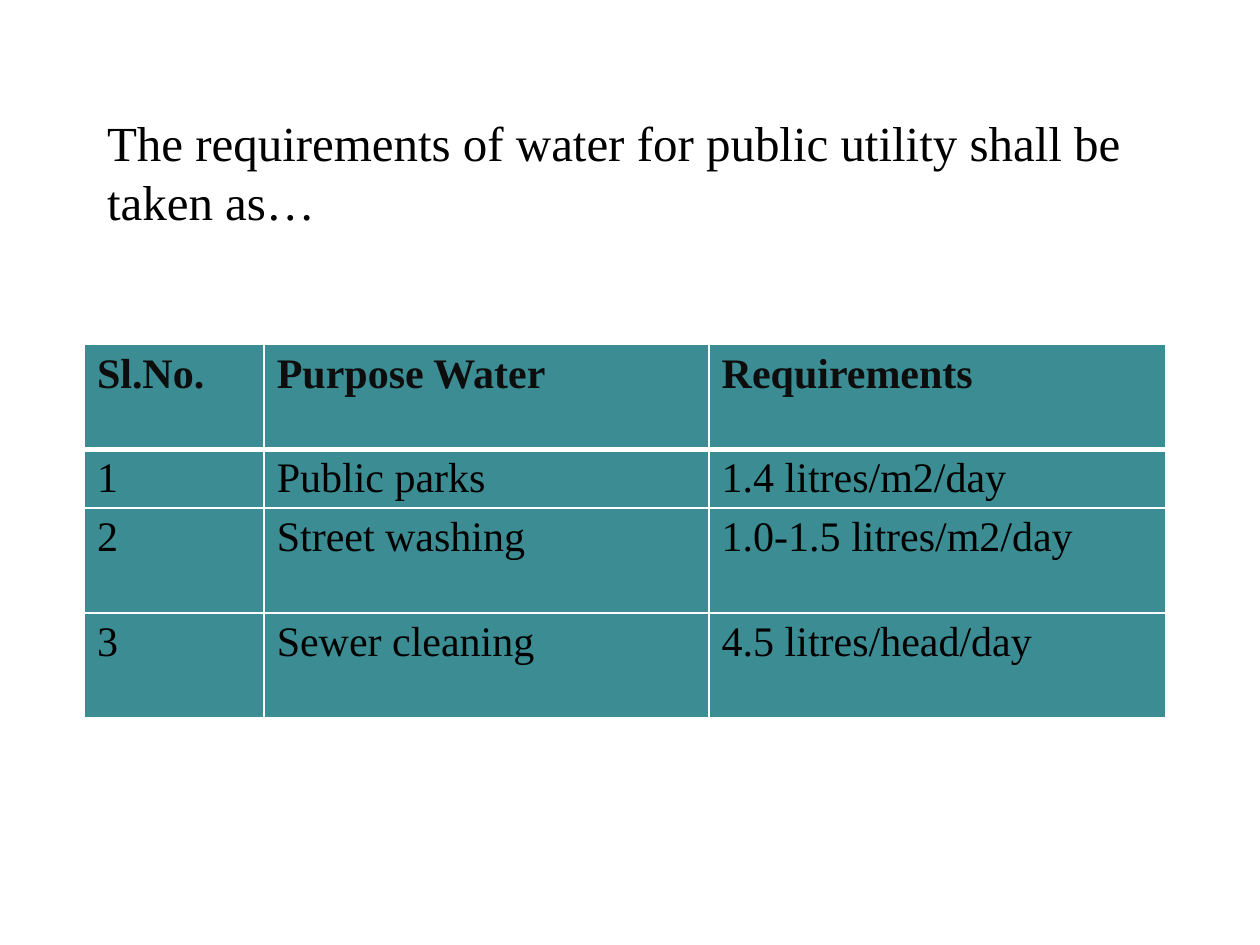
from dataclasses import dataclass

from lxml.etree import SubElement
from pptx import Presentation
from pptx.dml.color import RGBColor
from pptx.enum.text import MSO_ANCHOR, MSO_AUTO_SIZE, PP_ALIGN
from pptx.oxml.ns import qn
from pptx.slide import Slide
from pptx.table import _Cell
from pptx.text.text import Font
from pptx.util import Pt


@dataclass(frozen=True)
class Theme:
    font: str = "Times New Roman"
    title_size: int = 28
    table_size: int = 24
    text: str = "000000"
    header_text: str = "0D0D0D"
    cell: str = "3C8C93"
    border: str = "FFFFFF"
    thin: int = 1
    thick: int = 3


@dataclass(frozen=True)
class Requirement:
    number: str
    purpose: str
    amount: str
    height: float


THEME = Theme()
TITLE = "The requirements of water for public utility shall be taken as…"
COLUMN_WIDTHS = (102.75, 254.25, 261)
ROWS = (
    Requirement("Sl.No.", "Purpose Water", "Requirements", 60),
    Requirement("1", "Public parks", "1.4 litres/m2/day", 33.5),
    Requirement("2", "Street washing", "1.0-1.5 litres/m2/day", 60),
    Requirement("3", "Sewer cleaning", "4.5 litres/head/day", 60),
)


def format_font(font: Font, size: int, color: str, bold: bool = False) -> None:
    for name, value in {"name": THEME.font, "size": Pt(size), "bold": bold}.items():
        setattr(font, name, value)
    font.color.rgb = RGBColor.from_string(color)


def set_borders(cell: _Cell, top: int, bottom: int) -> None:
    tc_pr = cell._tc.get_or_add_tcPr()
    widths = {"L": THEME.thin, "R": THEME.thin, "T": top, "B": bottom}
    for side, width in widths.items():
        ln = SubElement(tc_pr, qn(f"a:ln{side}"), w=str(Pt(width)))
        fill = SubElement(ln, qn("a:solidFill"))
        SubElement(fill, qn("a:srgbClr"), val=THEME.border)


def add_title(slide: Slide) -> None:
    sp = slide.shapes.title
    box = {"left": 54, "top": 60.5, "width": 595.5, "height": 75}
    for name, value in box.items():
        setattr(sp, name, Pt(value))
    tf = sp.text_frame
    tf.text = TITLE
    frame = {
        "word_wrap": True,
        "auto_size": MSO_AUTO_SIZE.NONE,
        "vertical_anchor": MSO_ANCHOR.TOP,
    }
    for name, value in frame.items():
        setattr(tf, name, value)
    p = tf.paragraphs[0]
    p.alignment = PP_ALIGN.LEFT
    format_font(p.runs[0].font, THEME.title_size, THEME.text)


def fill_cell(cell: _Cell, text: str, row: int) -> None:
    header = row == 0
    cell.text = text
    cell.margin_bottom = Pt(2)
    set_borders(
        cell,
        top=THEME.thick if row == 1 else THEME.thin,
        bottom=THEME.thick if header else THEME.thin,
    )
    cell.fill.solid()
    cell.fill.fore_color.rgb = RGBColor.from_string(THEME.cell)
    color = THEME.header_text if header else THEME.text
    r = cell.text_frame.paragraphs[0].runs[0]
    format_font(r.font, THEME.table_size, color, header)


def add_requirements_table(slide: Slide) -> None:
    height = sum(item.height for item in ROWS)
    table = slide.shapes.add_table(
        len(ROWS), len(COLUMN_WIDTHS),
        Pt(48.25), Pt(196.75), Pt(sum(COLUMN_WIDTHS)), Pt(height),
    ).table
    for column, width in zip(table.columns, COLUMN_WIDTHS):
        column.width = Pt(width)
    for row, item in enumerate(ROWS):
        table.rows[row].height = Pt(item.height)
        for col, text in enumerate((item.number, item.purpose, item.amount)):
            fill_cell(table.cell(row, col), text, row)


def main() -> None:
    prs = Presentation()
    prs.slide_width, prs.slide_height = Pt(720), Pt(540)
    slide = prs.slides.add_slide(prs.slide_layouts[5])
    add_title(slide)
    add_requirements_table(slide)
    prs.save("out.pptx")


if __name__ == "__main__":
    main()
